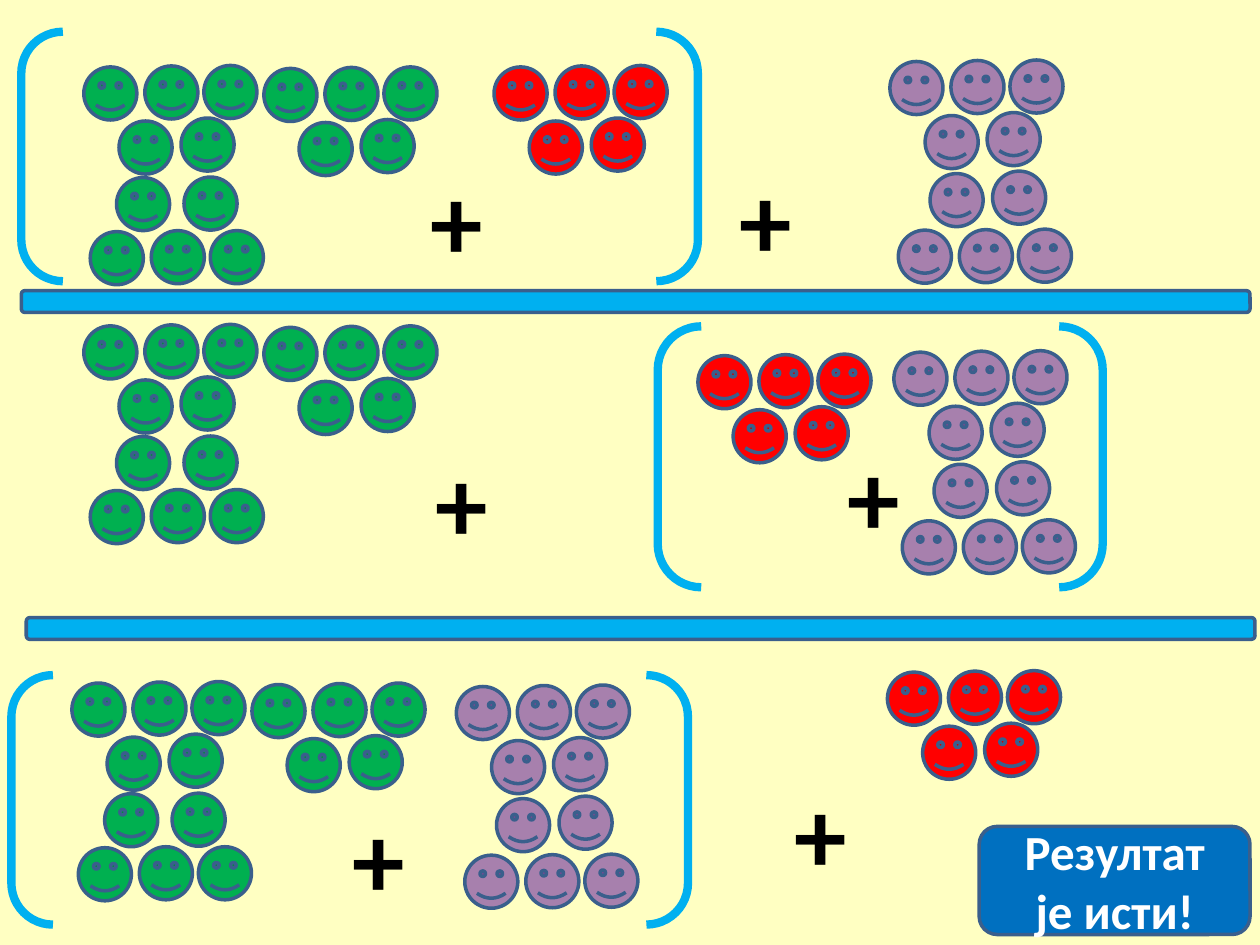
from pptx import Presentation, util as u
from pptx.dml.color import RGBColor
from pptx.enum import shapes, text
from pptx.oxml.ns import qn
from lxml import etree

GREEN, RED, PURPLE = "00B050", "FF0000", "7030A0"
SKY, OUTLINE = "00B0F0", "3A5F8C"
FACE = 1.07
FIVE = [(0, 0), (1.23, -0.02), (2.42, -0.03), (0.71, 1.09), (1.96, 1.03)]
GREEN_FEET = [(0.13, 3.32), (1.36, 3.3), (2.55, 3.3), (0.66, 2.23), (2.02, 2.22)]
PURPLE_FEET = [(0.17, 3.4), (1.4, 3.39), (2.59, 3.38), (0.81, 2.26), (2.07, 2.21)]
FIFTEEN = FIVE + GREEN_FEET + [(x + 3.63, y + 0.03) for x, y in FIVE]
TEN = FIVE + PURPLE_FEET


def rgb(value):
    return RGBColor.from_string(value)


def apply_format(target, values):
    for name, value in values.items():
        setattr(target, name, value)


def add_form(slide, kind, box, fill=None, line=OUTLINE, weight=2, alpha=None):
    form = slide.shapes.add_shape(kind, *map(u.Cm, box))
    form.shadow.inherit = False
    if fill:
        form.fill.solid()
        form.fill.fore_color.rgb = rgb(fill)
    else:
        form.fill.background()
    if alpha:
        color = form.fill._xPr.find(qn("a:solidFill"))[0]
        etree.SubElement(color, qn("a:alpha")).set("val", str(alpha * 1000))
    form.line.color.rgb = rgb(line)
    form.line.width = u.Pt(weight)
    return form


def add_faces(slide, left, top, pattern, fill, alpha=None):
    for dx, dy in pattern:
        add_form(slide, shapes.MSO_SHAPE.SMILEY_FACE,
                 (left + dx, top + dy, FACE, FACE), fill, alpha=alpha)


def add_bar(slide, left, top):
    add_form(slide, shapes.MSO_SHAPE.ROUNDED_RECTANGLE, (left, top, 24.77, 0.44), SKY)


def add_brackets(slide, *box):
    add_form(slide, shapes.MSO_SHAPE.DOUBLE_BRACKET, box, line=SKY, weight=4.75)


def write(paragraph, words, size, color):
    run = paragraph.add_run()
    run.text = words
    apply_format(run.font, {"name": "Calibri", "size": u.Pt(size), "bold": True})
    run.font.color.rgb = rgb(color)


def add_plus(slide, left, top, width, wrap):
    plus = slide.shapes.add_textbox(*map(u.Cm, (left, top, width, 2.82))).text_frame
    apply_format(plus, {"word_wrap": wrap,
                        "auto_size": text.MSO_AUTO_SIZE.SHAPE_TO_FIT_TEXT})
    write(plus.paragraphs[0], "+", 60, "000000")


def add_result(slide, lines):
    frame = add_form(slide, shapes.MSO_SHAPE.ROUNDED_RECTANGLE,
                     (19.74, 16.66, 5.46, 2.18), "0070C0").text_frame
    apply_format(frame, {"word_wrap": True, "vertical_anchor": text.MSO_ANCHOR.MIDDLE})
    for index, words in enumerate(lines):
        paragraph = frame.add_paragraph() if index else frame.paragraphs[0]
        paragraph.alignment = text.PP_ALIGN.CENTER
        write(paragraph, words, 28, "FFFFFF")


def main():
    deck = Presentation()
    apply_format(deck, {"slide_width": u.Cm(25.4), "slide_height": u.Cm(19.05)})
    slide = deck.slides.add_slide(deck.slide_layouts[6])
    slide.background.fill.solid()
    slide.background.fill.fore_color.rgb = rgb("FFFFC2")

    sums = [
        ((1.69, 1.35), (9.96, 1.35), (17.94, 1.24)),
        ((1.69, 6.57), (14.07, 7.17), (18.02, 7.1)),
        ((1.45, 13.77), (17.89, 13.55), (9.2, 13.84)),
    ]
    for green, red, purple in sums:
        add_faces(slide, *green, FIFTEEN, GREEN)
        add_faces(slide, *red, FIVE, RED)
        add_faces(slide, *purple, TEN, PURPLE, alpha=61)

    for left, top in [(0.43, 5.86), (0.53, 12.45)]:
        add_bar(slide, left, top)

    for left, top in [(14.66, 3), (8.53, 8.69), (16.84, 8.58)]:
        add_plus(slide, left, top, 1.75, True)
    for left, top in [(8.43, 3.02), (6.86, 15.88), (15.77, 15.37)]:
        add_plus(slide, left, top, 1.57, False)

    add_brackets(slide, 0.43, 0.64, 13.64, 5.03)
    add_brackets(slide, 13.26, 6.58, 8.97, 5.26)
    add_brackets(slide, 0.23, 13.61, 13.64, 5.03)
    add_result(slide, ["Резултат", "је исти!"])
    deck.save("out.pptx")


if __name__ == "__main__":
    main()
